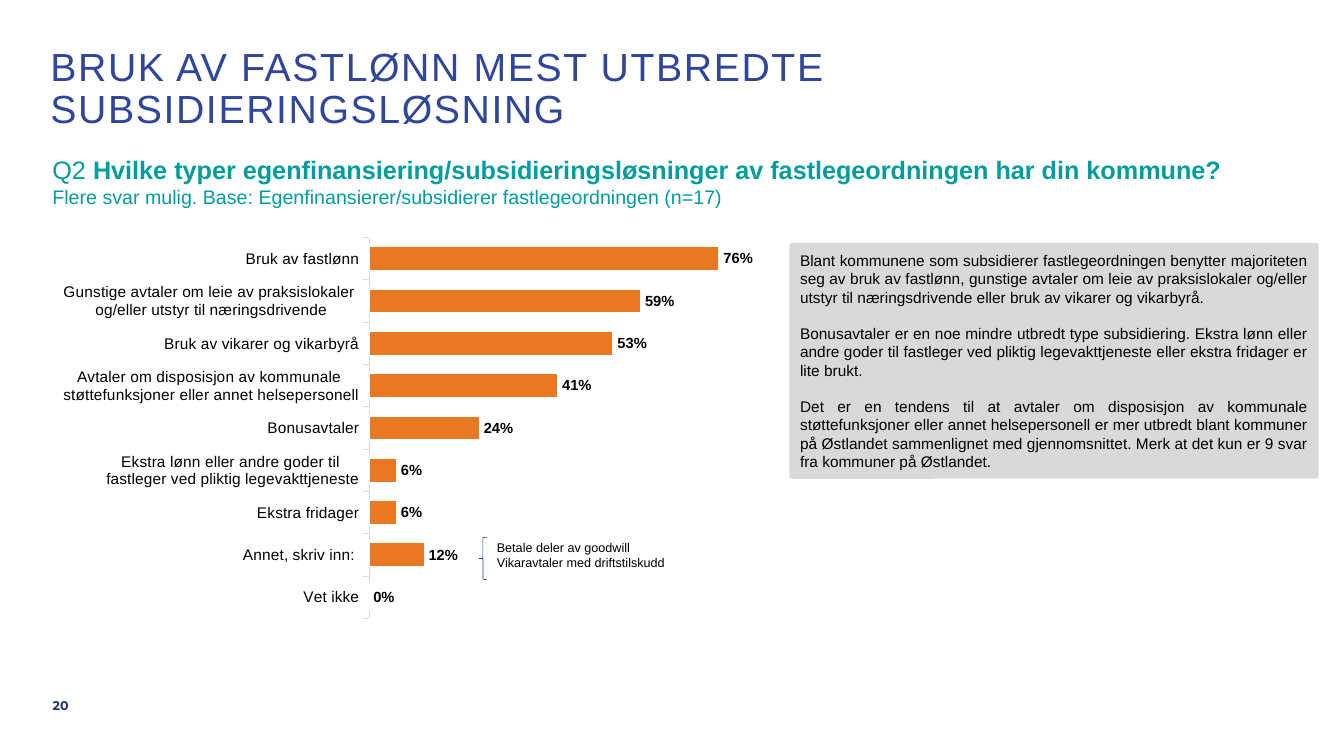
"""Build the slide on how municipalities subsidise their GP scheme."""
from lxml import etree
from pptx import Presentation
from pptx.chart.data import CategoryChartData
from pptx.dml.color import RGBColor
from pptx.enum.chart import XL_CHART_TYPE, XL_LABEL_POSITION, XL_TICK_MARK
from pptx.enum.shapes import MSO_SHAPE
from pptx.enum.text import MSO_ANCHOR, MSO_AUTO_SIZE, PP_ALIGN
from pptx.oxml import parse_xml
from pptx.oxml.ns import nsdecls, qn
from pptx.util import Inches, Pt

BAR = XL_CHART_TYPE.BAR_CLUSTERED
OUTSIDE_END = XL_LABEL_POSITION.OUTSIDE_END
TICK_OUT = XL_TICK_MARK.OUTSIDE
ROUND_RECT, LEFT_BRACE = MSO_SHAPE.ROUNDED_RECTANGLE, MSO_SHAPE.LEFT_BRACE
TOP, MIDDLE = MSO_ANCHOR.TOP, MSO_ANCHOR.MIDDLE
LEFT, RIGHT, JUSTIFY = PP_ALIGN.LEFT, PP_ALIGN.RIGHT, PP_ALIGN.JUSTIFY
NO_FIT = MSO_AUTO_SIZE.NONE

WIDTH, HEIGHT = Inches(13.33), Inches(7.5)
COLORS = {"blue": "2F469C", "navy": "233475", "teal": "009D9C", "orange": "E87722",
          "grey": "D9D9D9", "black": "000000", "white": "FFFFFF"}

ANSWERS = [
    ("Bruk av fastlønn", 0.76),
    ("Gunstige avtaler om leie av praksislokaler \nog/eller utstyr til næringsdrivende", 0.59),
    ("Bruk av vikarer og vikarbyrå", 0.53),
    ("Avtaler om disposisjon av kommunale \nstøttefunksjoner eller annet helsepersonell", 0.41),
    ("Bonusavtaler", 0.24),
    ("Ekstra lønn eller andre goder til \nfastleger ved pliktig legevakttjeneste", 0.06),
    ("Ekstra fridager", 0.06),
    ("Annet, skriv inn: ", 0.12),
    ("Vet ikke", 0),
]
FINDINGS = [
    "Blant kommunene som subsidierer fastlegeordningen benytter majoriteten seg av bruk av "
    "fastlønn, gunstige avtaler om leie av praksislokaler og/eller utstyr til "
    "næringsdrivende eller bruk av vikarer og vikarbyrå.",
    "Bonusavtaler er en noe mindre utbredt type subsidiering. Ekstra lønn eller andre goder "
    "til fastleger ved pliktig legevakttjeneste eller ekstra fridager er lite brukt.",
    "Det er en tendens til at avtaler om disposisjon av kommunale støttefunksjoner eller "
    "annet helsepersonell er mer utbredt blant kommuner på Østlandet sammenlignet med "
    "gjennomsnittet. Merk at det kun er 9 svar fra kommuner på Østlandet.",
]


def rgb(name):
    """Return the named colour."""
    return RGBColor.from_string(COLORS[name])


def box(x, y, w, h):
    """Turn percentages of the slide into left, top, width and height."""
    return [int(side * share / 100)
            for side, share in zip((WIDTH, HEIGHT) * 2, (x, y, w, h))]


def move(sp, area):
    """Place a shape on an area."""
    sp.left, sp.top, sp.width, sp.height = area


def style(font, size, color, bold=False, name="Arial"):
    """Set the size, colour, weight and family of a font."""
    font.size, font.bold, font.name = Pt(size), bold, name
    font.color.rgb = rgb(color)


def write(sp, paragraphs, align=LEFT, anchor=TOP, insets=(0.1, 0.05, 0.1, 0.05), gap=0):
    """Write paragraphs, each a list of (text, *style) runs."""
    tf = sp.text_frame
    tf.word_wrap, tf.auto_size, tf.vertical_anchor = True, NO_FIT, anchor
    tf.margin_left, tf.margin_top, tf.margin_right, tf.margin_bottom = map(Inches, insets)
    for i, runs in enumerate(paragraphs):
        p = tf.add_paragraph() if i else tf.paragraphs[0]
        p.alignment, p.space_before = align, Pt(gap if i else 0)
        for text, *look in runs:
            r = p.add_run()
            r.text = text
            style(r.font, *look)
    return tf


def add_title(s):
    """Fill the title placeholder."""
    sp = s.shapes.title
    move(sp, box(3.15, 5.6, 96.25, 12.67))
    text = "BRUK AV FASTLØNN MEST UTBREDTE SUBSIDIERINGSLØSNING"
    p = write(sp, [[(text, 28, "blue")]], insets=(0.08, 0.05, 0.08, 0.05)).paragraphs[0]
    p.line_spacing = 0.9
    p.runs[0].font._element.set("spc", "120")


def add_question(s):
    """Fill the body placeholder with the survey question and its base."""
    sp = s.placeholders[1]
    move(sp, box(3.3, 19.73, 96.1, 7.87))
    question = "Hvilke typer egenfinansiering/subsidieringsløsninger av fastlegeordningen har din kommune?"
    base = "Flere svar mulig. Base: Egenfinansierer/subsidierer fastlegeordningen (n=17)"
    tf = write(sp, [[("Q2 ", 18, "teal"), (question, 18, "teal", True)], [(base, 14, "teal")]],
               insets=(0.08, 0.05, 0.08, 0))
    for p in tf.paragraphs:
        pPr = p._p.get_or_add_pPr()
        pPr.set("marL", "0")
        pPr.set("indent", "0")
        etree.SubElement(pPr, qn("a:buNone"))


def add_text(s, area, paragraphs, **layout):
    """Add a text box."""
    write(s.shapes.add_textbox(*area), paragraphs, **layout)


def add_shape(s, kind, area, fill=None, line=None):
    """Add a preset shape with an optional fill and thin outline."""
    sp = s.shapes.add_shape(kind, *area)
    sp.shadow.inherit = False
    if fill:
        sp.fill.solid()
        sp.fill.fore_color.rgb = rgb(fill)
    else:
        sp.fill.background()
    if line:
        sp.line.color.rgb, sp.line.width = rgb(line), Pt(0.5)
    else:
        sp.line.fill.background()
    return sp


def set_plot_area(chart, x, y, w, h):
    """Fix the inner plot area as shares of the chart."""
    plot_area = chart._chartSpace.chart.plotArea
    for old in plot_area.findall(qn("c:layout")):
        plot_area.remove(old)
    values = [("layoutTarget", "inner"), ("xMode", "edge"), ("yMode", "edge"),
              ("x", x), ("y", y), ("w", w), ("h", h)]
    items = "".join(f'<c:{tag} val="{val}"/>' for tag, val in values)
    plot_area.insert(0, parse_xml(
        f'<c:layout {nsdecls("c")}><c:manualLayout>{items}</c:manualLayout></c:layout>'))


def add_bars(s, area):
    """Add the bar chart of answers."""
    data = CategoryChartData(number_format="0%")
    data.categories = [label for label, _ in ANSWERS]
    data.add_series("Series 1", [share for _, share in ANSWERS])
    chart = s.shapes.add_chart(BAR, *area, data).chart
    chart.has_legend = chart.has_title = False
    style(chart.font, 10, "black")
    set_plot_area(chart, 0.43, 0.02, 0.51, 0.98)

    cat = chart.category_axis
    cat.reverse_order, cat.major_tick_mark = True, TICK_OUT
    cat.has_major_gridlines = False
    cat.format.line.color.rgb, cat.format.line.width = rgb("grey"), Pt(0.75)
    style(cat.tick_labels.font, 11, "black")
    val = chart.value_axis
    val.minimum_scale, val.maximum_scale = 0, 0.8
    val.has_major_gridlines = val.visible = False

    plot = chart.plots[0]
    plot.gap_width, plot.vary_by_categories = 70, False
    bars = plot.series[0]
    bars.format.fill.solid()
    bars.format.fill.fore_color.rgb = rgb("orange")
    bars.format.line.color.rgb, bars.format.line.width = rgb("white"), Pt(1.5)
    labels = bars.data_labels
    labels.show_value, labels.position = True, OUTSIDE_END
    labels.number_format, labels.number_format_is_linked = "0%", False
    style(labels.font, 10.5, "black", True)


def main():
    """Build and save the slide."""
    prs = Presentation()
    prs.slide_width, prs.slide_height = WIDTH, HEIGHT
    s = prs.slides.add_slide(prs.slide_layouts[1])
    add_question(s)
    add_title(s)
    add_text(s, box(3.15, 90.67, 2.48, 5.33), [[("20", 9, "navy", True, "Montserrat")]],
             align=RIGHT, anchor=MIDDLE, insets=(0, 0.05, 0.07, 0.05))
    add_bars(s, box(4.35, 30.4, 53.79, 51.47))
    panel = add_shape(s, ROUND_RECT, box(58.74, 32.13, 39.38, 31.2), fill="grey")
    panel.adjustments[0] = 0.01
    write(panel, [[(text, 11, "black")] for text in FINDINGS],
          align=JUSTIFY, anchor=MIDDLE, gap=12.65)
    add_shape(s, LEFT_BRACE, box(35.63, 71.07, 0.6, 5.6), line="blue")
    add_text(s, box(36.23, 70.8, 19.35, 5.33),
             [[(text, 9, "black")]
              for text in ("Betale deler av goodwill", "Vikaravtaler med driftstilskudd")])
    prs.save("out.pptx")


if __name__ == "__main__":
    main()
